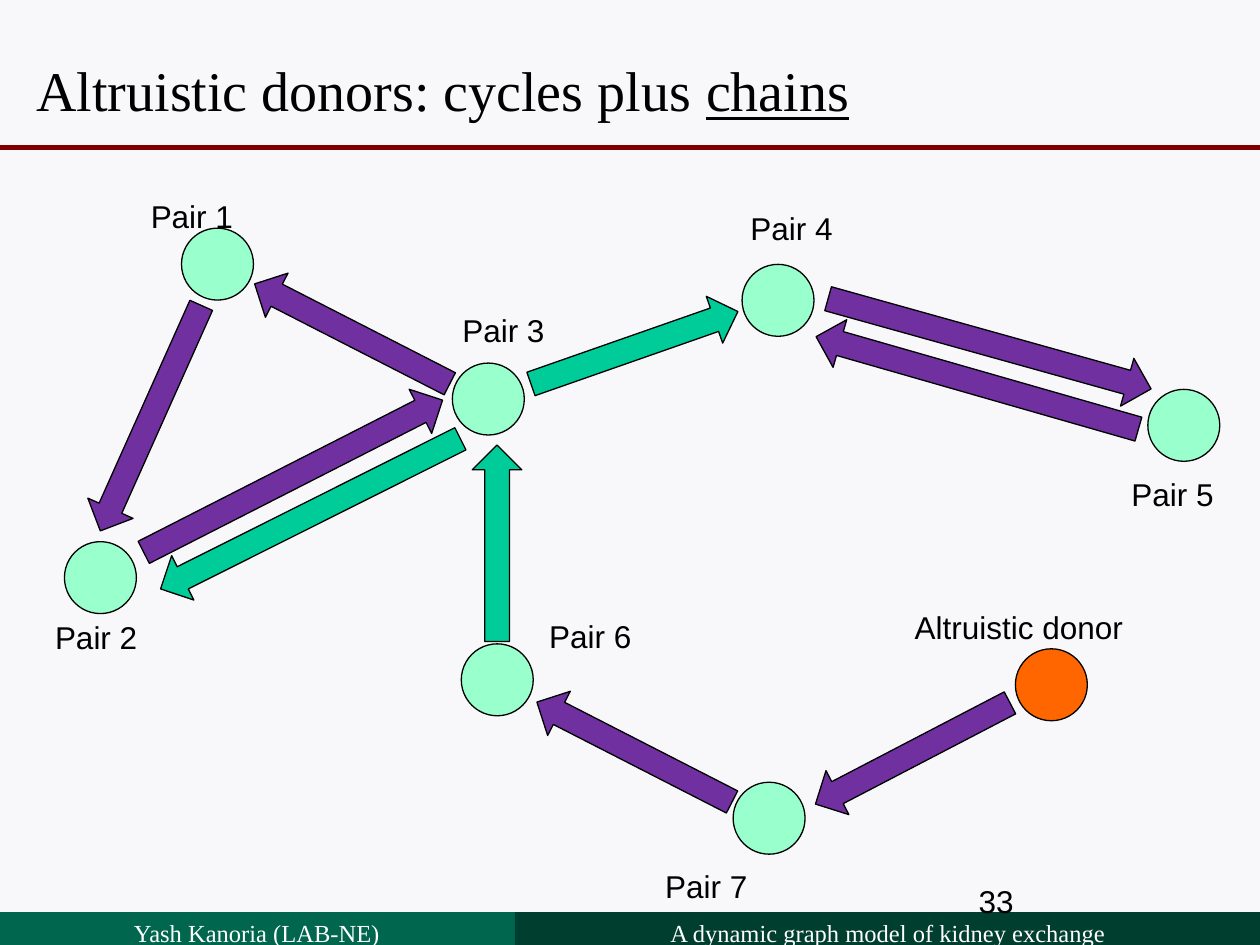
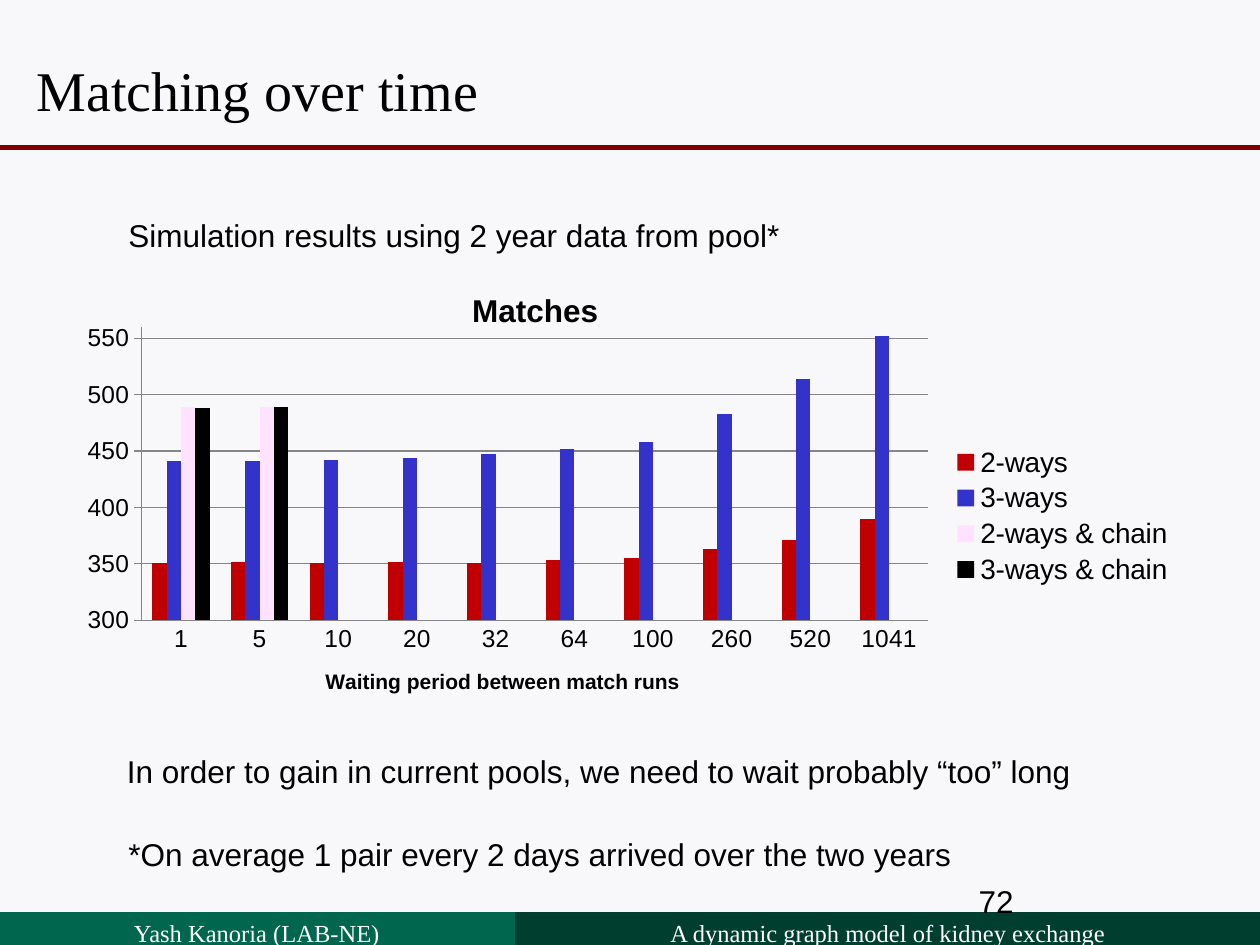
from lxml import etree
from pptx import Presentation
from pptx.chart.data import CategoryChartData
from pptx.dml.color import RGBColor
from pptx.enum.chart import XL_CHART_TYPE as CHART, XL_LEGEND_POSITION as LEGEND, XL_TICK_MARK as TICK
from pptx.enum.shapes import MSO_CONNECTOR as CONN, MSO_SHAPE as SHAPE
from pptx.enum.text import MSO_ANCHOR as ANCHOR, MSO_AUTO_SIZE as AUTO, PP_ALIGN as ALIGN
from pptx.oxml.ns import qn
from pptx.util import Cm, Pt

COLORS = {
    "paper": "F8F8FA", "ink": "000000", "rule": "800000", "grid": "868686",
    "footer_left": "00664D", "footer_right": "003E2F", "white": "FFFFFF",
    "pair": "99FFCC", "donor": "FF6600", "purple": "7030A0", "green": "00CC99",
    "red": "C00000", "blue": "3333CC", "pink": "FFE2FF",
}
RGB = {name: RGBColor.from_string(value) for name, value in COLORS.items()}


def add_text(s, x, y, w, text, bold=False):
    """Add an 18 pt Arial text box, measured in centimetres."""
    tf = s.shapes.add_textbox(Cm(x), Cm(y), Cm(w), Cm(1.02)).text_frame
    tf.word_wrap = True
    p = tf.paragraphs[0]
    p.text = text
    p.font.name, p.font.size, p.font.bold = "Arial", Pt(18), bold
    p.font.color.rgb = RGB["ink"]


def place_in_chart(parent, index, **fractions):
    """Give a chart part a manual layout in fractions of the chart."""
    for old in parent.findall(qn("c:layout")):
        parent.remove(old)
    layout = etree.Element(qn("c:layout"))
    manual = etree.SubElement(layout, qn("c:manualLayout"))
    for tag, value in fractions.items():
        etree.SubElement(manual, qn("c:" + tag)).set("val", str(value))
    parent.insert(index, layout)


prs = Presentation()
prs.slide_width, prs.slide_height = Cm(25.4), Cm(19.05)
bg = prs.slide_master.background.fill
bg.solid()
bg.fore_color.rgb = RGB["paper"]

# Shared parts: footer bands, rule, title, page number
footers = [
    (-0.02, 10.4, "footer_left", "Yash Kanoria (LAB-NE)"),
    (10.38, 15.04, "footer_right", "A dynamic graph model of kidney exchange"),
]
pages = [("Altruistic donors: cycles plus ", "chains", "33"),
         ("Matching over time", "", "72")]
for title, underlined, number in pages:
    s = prs.slides.add_slide(prs.slide_layouts[5])
    for x, w, color, text in footers:
        sp = s.shapes.add_shape(SHAPE.RECTANGLE, Cm(x), Cm(18.39), Cm(w), Cm(0.86))
        sp.shadow.inherit = False
        sp.fill.solid()
        sp.fill.fore_color.rgb = RGB[color]
        sp.line.fill.background()
        tf = sp.text_frame
        tf.vertical_anchor = ANCHOR.TOP
        p = tf.paragraphs[0]
        p.text, p.alignment = text, ALIGN.CENTER
        p.font.name, p.font.size = "Times New Roman", Pt(14)
        p.font.color.rgb = RGB["white"]

    rule = s.shapes.add_connector(CONN.STRAIGHT, 0, Cm(2.97), Cm(25.4), Cm(2.97))
    rule.line.color.rgb, rule.line.width = RGB["rule"], Pt(3)
    etree.SubElement(rule._element.spPr, qn("a:effectLst"))

    sp = s.shapes.title
    sp.left, sp.top, sp.width, sp.height = Cm(0.48), Cm(1.07), Cm(21.54), Cm(1.47)
    tf = sp.text_frame
    tf.auto_size, tf.vertical_anchor = AUTO.NONE, ANCHOR.MIDDLE
    p = tf.paragraphs[0]
    p.text, p.alignment = title, ALIGN.LEFT
    if underlined:
        r = p.add_run()
        r.text, r.font.underline = underlined, True
    for r in p.runs:
        r.font.name, r.font.size = "Times New Roman", Pt(32)
        r.font.color.rgb = RGB["ink"]
    add_text(s, 19.48, 17.65, 5.92, number)

graph_slide, chart_slide = prs.slides

# Exchange graph: node left and top, label left and top
nodes = [
    ("Pair 1", 3.66, 4.6, 2.79, 3.84),
    ("Pair 2", 1.3, 10.92, 0.86, 12.34),
    ("Pair 3", 9.12, 7.32, 9.07, 6.15),
    ("Pair 4", 14.96, 5.33, 14.88, 4.09),
    ("Pair 5", 23.14, 7.85, 22.56, 9.45),
    ("Pair 6", 9.3, 12.98, 10.82, 12.32),
    ("Pair 7", 14.78, 15.77, 13.16, 17.35),
    ("Altruistic donor", 20.47, 13.08, 18.19, 12.14),
]
# Arrow centre, length, rotation and colour
arrows = [
    (10.02, 10.95, 3.96, 180, "green"),
    (7.1, 6.73, 4.42, 117.1, "purple"),
    (3.04, 8.43, 4.98, 24.1, "purple"),
    (12.79, 15.16, 4.42, 117.1, "purple"),
    (12.79, 7.01, 4.42, 250.7, "green"),
    (19.7, 7.72, 6.76, 106, "purple"),
    (19.95, 6.93, 6.76, 285.6, "purple"),
    (6.26, 10.36, 6.76, 63.4, "green"),
    (5.91, 9.6, 6.76, 243, "purple"),
    (18.4, 15.19, 4.42, 62.5, "purple"),
]
NODE, ARROW_W = 1.45, 1
outlined = []
for label, x, y, label_x, label_y in nodes:
    is_pair = label.startswith("Pair")
    sp = graph_slide.shapes.add_shape(SHAPE.OVAL, Cm(x), Cm(y), Cm(NODE), Cm(NODE))
    outlined.append((sp, "pair" if is_pair else "donor"))
    add_text(graph_slide, label_x, label_y, 2.6 if is_pair else 5.2, label)
for x, y, length, angle, color in arrows:
    sp = graph_slide.shapes.add_shape(SHAPE.DOWN_ARROW, Cm(x - ARROW_W / 2), Cm(y - length / 2),
                                      Cm(ARROW_W), Cm(length))
    sp.rotation = angle
    outlined.append((sp, color))
for sp, color in outlined:
    sp.shadow.inherit = False
    sp.fill.solid()
    sp.fill.fore_color.rgb = RGB[color]
    sp.line.color.rgb, sp.line.width = RGB["ink"], Pt(0.75)

# Simulation notes
add_text(chart_slide, 2.34, 4.24, 14.5, "Simulation results using 2 year data from pool*")
add_text(chart_slide, 2.31, 15.04, 20.5,
         "In order to gain in current pools, we need to wait probably “too” long")
add_text(chart_slide, 2.34, 16.71, 18, "*On average 1 pair every 2 days arrived over the two years")

# Matches chart
data = CategoryChartData()
data.categories = ["1", "5", "10", "20", "32", "64", "100", "260", "520", "1041"]
series = [
    ("2-ways", "red", [351, 352, 351, 352, 351, 353, 355, 363, 371, 390]),
    ("3-ways", "blue", [441, 441, 442, 444, 447, 452, 458, 483, 514, 552]),
    ("2-ways & chain", "pink", [489, 489] + [None] * 8),
    ("3-ways & chain", "ink", [488, 489] + [None] * 8),
]
for name, color, values in series:
    data.add_series(name, values)
chart = chart_slide.shapes.add_chart(CHART.COLUMN_CLUSTERED, Cm(1.27), Cm(6.35),
                                     Cm(22.66), Cm(8.1), data).chart
chart.has_title = False
chart.font.name, chart.font.size = "Arial", Pt(10)
chart.font.color.rgb = RGB["ink"]
plot = chart.plots[0]
plot.gap_width, plot.overlap, plot.vary_by_categories = 150, 0, False
for ser, (name, color, values) in zip(plot.series, series):
    ser.format.fill.solid()
    ser.format.fill.fore_color.rgb = RGB[color]

chart.has_legend = True
chart.legend.position, chart.legend.include_in_layout = LEGEND.RIGHT, False
chart.legend.font.size = Pt(16)

cat_axis, val_axis = chart.category_axis, chart.value_axis
cat_axis.major_tick_mark, val_axis.major_tick_mark = TICK.NONE, TICK.OUTSIDE
val_axis.minimum_scale, val_axis.maximum_scale, val_axis.major_unit = 300, 560, 50
val_axis.has_major_gridlines = True
for axis in (cat_axis, val_axis):
    axis.tick_labels.font.size = Pt(14)
    axis.format.line.color.rgb = RGB["grid"]
val_axis.major_gridlines.format.line.color.rgb = RGB["grid"]

tf = cat_axis.axis_title.text_frame
tf.text = "Waiting period between match runs"
font = tf.paragraphs[0].runs[0].font
font.name, font.size, font.bold = "Arial", Pt(12), True
font.color.rgb = RGB["ink"]
place_in_chart(cat_axis.axis_title._element, 1, xMode="edge", yMode="edge", x=0.23, y=0.87)
place_in_chart(chart._chartSpace.chart.plotArea, 0, layoutTarget="inner", xMode="edge",
               yMode="edge", x=0.07, y=0.03, w=0.7, h=0.73)
add_text(chart_slide, 9.27, 5.74, 5.97, "Matches", bold=True)

prs.save("out.pptx")
